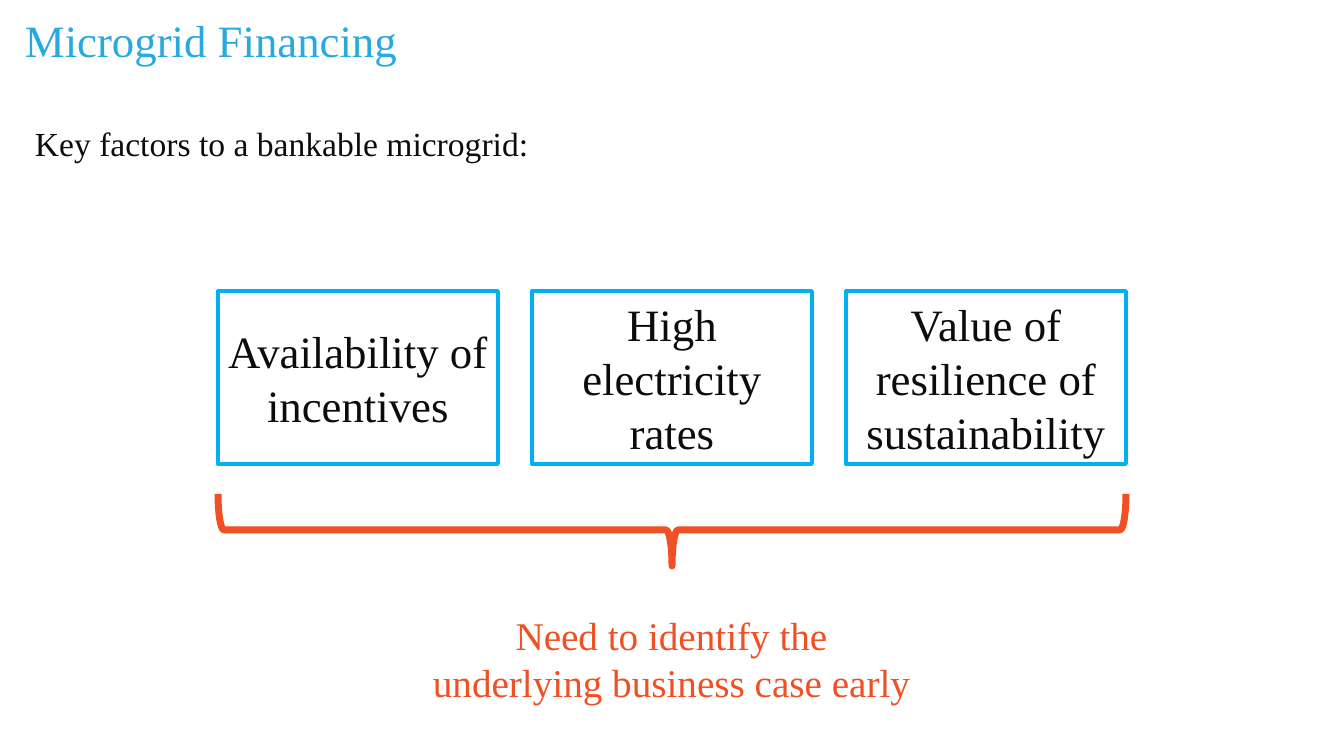
"""Build the Microgrid Financing slide."""
from pptx import Presentation
from pptx.dml.color import RGBColor
from pptx.enum.shapes import MSO_SHAPE
from pptx.enum.text import MSO_ANCHOR, PP_ALIGN
from pptx.util import Pt

RECTANGLE, BRACE = MSO_SHAPE.RECTANGLE, MSO_SHAPE.RIGHT_BRACE
TOP, MIDDLE = MSO_ANCHOR.TOP, MSO_ANCHOR.MIDDLE
LEFT, CENTER = PP_ALIGN.LEFT, PP_ALIGN.CENTER
TITLE_BLUE = RGBColor(0x28, 0xAA, 0xE1)
BOX_BLUE = RGBColor(0x00, 0xB0, 0xF0)
ORANGE = RGBColor(0xF0, 0x50, 0x23)
INK = RGBColor(0x0C, 0x0C, 0x0C)
EMU_PER_PX = 914400 / 100.8


def px(*lengths):
    return [round(length * EMU_PER_PX) for length in lengths]


def write(shape, text, size, color, align=LEFT, anchor=TOP, spacing=1.0, inset=None):
    frame = shape.text_frame
    frame.word_wrap = True
    frame.vertical_anchor = anchor
    if inset is not None:
        for side in ("left", "top", "right", "bottom"):
            setattr(frame, f"margin_{side}", inset)
    paragraph = frame.paragraphs[0]
    paragraph.alignment = align
    paragraph.line_spacing = spacing
    run = paragraph.add_run()
    run.text = text
    for name, value in {"name": "Times New Roman", "size": Pt(size)}.items():
        setattr(run.font, name, value)
    run.font.color.rgb = color


deck = Presentation()
deck.slide_width, deck.slide_height = px(1344, 756)
slide = deck.slides.add_slide(deck.slide_layouts[6])
shapes = slide.shapes

title = shapes.add_textbox(*px(25, 21, 968, 97))
write(title, "Microgrid Financing", 32, TITLE_BLUE, spacing=0.85, inset=0)

intro = shapes.add_textbox(*px(25, 122, 532, 613))
write(intro, "Key factors to a bankable microgrid:", 24, INK, spacing=0.9)

factors = [
    "Availability of incentives",
    "High electricity rates",
    "Value of resilience of sustainability",
]
outlined = []
for column, factor in enumerate(factors):
    factor_box = shapes.add_shape(RECTANGLE, *px(218 + 314 * column, 291, 280, 173))
    write(factor_box, factor, 32, INK, CENTER, MIDDLE)
    outlined.append((factor_box, BOX_BLUE, 2.75))

brace = shapes.add_shape(BRACE, *px(636, 76, 72, 908))
brace.rotation = 90
outlined.append((brace, ORANGE, 5))

for shape, color, width in outlined:
    shape.shadow.inherit = False
    shape.fill.background()
    shape.line.color.rgb = color
    shape.line.width = Pt(width)

conclusion = shapes.add_textbox(*px(420, 606, 503, 105))
write(conclusion, "Need to identify the underlying business case early", 28, ORANGE, CENTER)

deck.save("out.pptx")
